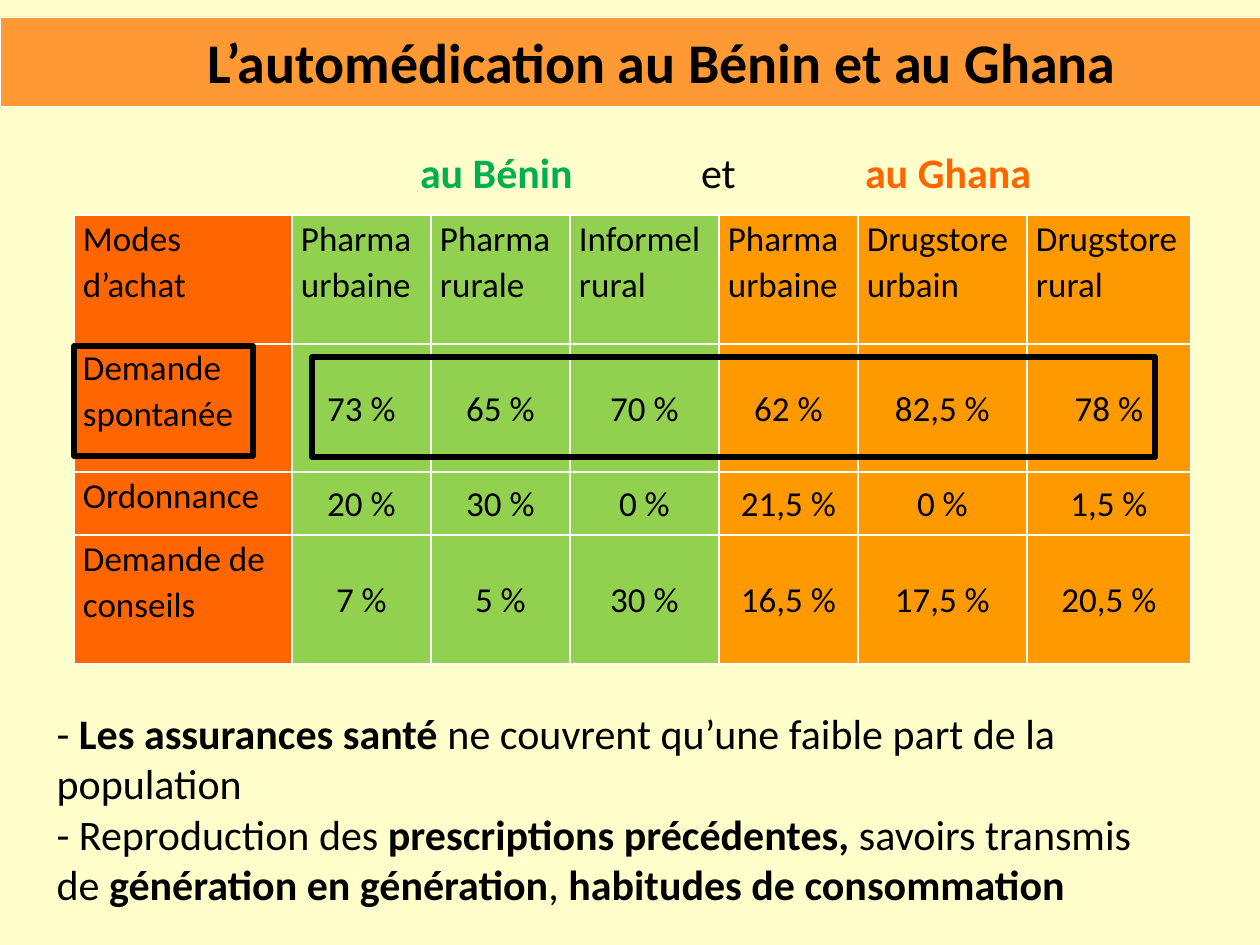
from dataclasses import dataclass

import lxml.etree
import pptx
import pptx.dml.color
import pptx.enum.shapes
import pptx.enum.text
import pptx.oxml.ns
import pptx.util

RGBColor = pptx.dml.color.RGBColor
Align = pptx.enum.text.PP_ALIGN
Anchor = pptx.enum.text.MSO_ANCHOR
qn = pptx.oxml.ns.qn

EMU_PER_PX = 914400 / 126
FONT = "Calibri"

BLACK = RGBColor(0x00, 0x00, 0x00)
WHITE = RGBColor(0xFF, 0xFF, 0xFF)
CREAM = RGBColor(0xFF, 0xFF, 0xCC)
BANNER_ORANGE = RGBColor(0xFF, 0x99, 0x33)
LABEL_ORANGE = RGBColor(0xFF, 0x66, 0x00)
BENIN_FILL = RGBColor(0x92, 0xD0, 0x50)
BENIN_TEXT = RGBColor(0x00, 0xB0, 0x50)
GHANA_FILL = RGBColor(0xFF, 0x99, 0x00)


@dataclass(frozen=True)
class Box:
    left: int
    top: int
    width: int
    height: int


@dataclass(frozen=True)
class Run:
    text: str
    bold: bool = False
    color: RGBColor = BLACK


@dataclass(frozen=True)
class Column:
    width: int
    fill: RGBColor
    texts: tuple[str, ...]
    is_label: bool = False


TABLE_LEFT, TABLE_TOP = 74, 215
ROW_HEIGHTS = (129, 128, 63, 129)
MAIN_COLUMNS = (
    Column(218, LABEL_ORANGE,
           ("Modes d’achat", "Demande spontanée", "Ordonnance", "Demande de conseils"), True),
    Column(139, BENIN_FILL, ("Pharma urbaine", "73 %", "20 %", "7 %")),
    Column(139, BENIN_FILL, ("Pharma rurale", "65 %", "30 %", "5 %")),
    Column(149, BENIN_FILL, ("Informel rural", "70 %", "0 %", "30 %")),
    Column(139, GHANA_FILL, ("Pharma urbaine", "62 %", "21,5 %", "16,5 %")),
    Column(169, GHANA_FILL, ("Drugstore urbain", "82,5 %", "0 %", "17,5 %")),
)
RURAL_DRUGSTORE = (
    Column(164, GHANA_FILL, ("Drugstore rural", "78 %", "1,5 %", "20,5 %")),
)

COUNTRY_TABS = (391, 672, 836)
COUNTRIES = (
    Run("\tau Bénin", True, BENIN_TEXT),
    Run("\tet"),
    Run("\tau Ghana", True, LABEL_ORANGE),
)
NOTES = (
    (
        Run("- "),
        Run("Les assurances santé ", True),
        Run("ne couvrent qu’une faible part de la population"),
    ),
    (
        Run("- Reproduction des "),
        Run("prescriptions précédentes, ", True),
        Run("savoirs transmis de "),
        Run("génération en génération", True),
        Run(", "),
        Run("habitudes de consommation", True),
    ),
)
HIGHLIGHTS = (Box(312, 357, 843, 100), Box(74, 346, 179, 110))


def px(length: int) -> int:
    return pptx.util.Emu(round(length * EMU_PER_PX))


def edges(box: Box) -> tuple[int, int, int, int]:
    return px(box.left), px(box.top), px(box.width), px(box.height)


def place(shape, box: Box) -> None:
    shape.left, shape.top, shape.width, shape.height = edges(box)


def add_runs(paragraph, runs: tuple[Run, ...], size: int) -> None:
    for item in runs:
        run = paragraph.add_run()
        run.text = item.text
        run.font.name = FONT
        run.font.size = pptx.util.Pt(size)
        run.font.bold = item.bold
        run.font.color.rgb = item.color


def add_rectangle(slide, box: Box, line_color: RGBColor, line_width: float):
    shape = slide.shapes.add_shape(
        pptx.enum.shapes.MSO_SHAPE.RECTANGLE, *edges(box))
    shape.shadow.inherit = False
    shape.fill.background()
    shape.line.color.rgb = line_color
    shape.line.width = pptx.util.Pt(line_width)
    return shape


def add_cell_borders(cell) -> None:
    """Draw thin white lines on all sides, placed before the cell fill."""
    properties = cell._tc.get_or_add_tcPr()
    for position, side in enumerate(("a:lnL", "a:lnR", "a:lnT", "a:lnB")):
        line = lxml.etree.Element(qn(side), w=str(pptx.util.Pt(1)))
        fill = lxml.etree.SubElement(line, qn("a:solidFill"))
        lxml.etree.SubElement(fill, qn("a:srgbClr"), val=str(WHITE))
        properties.insert(position, line)


def fill_cell(cell, text: str, fill: RGBColor, centered: bool) -> None:
    cell.fill.solid()
    cell.fill.fore_color.rgb = fill
    cell.margin_left = cell.margin_right = px(9)
    cell.margin_top = cell.margin_bottom = 0
    cell.vertical_anchor = Anchor.MIDDLE if centered else Anchor.TOP
    paragraph = cell.text_frame.paragraphs[0]
    paragraph.alignment = Align.CENTER if centered else Align.LEFT
    paragraph.line_spacing = 1.07
    paragraph.space_after = pptx.util.Pt(4)
    add_runs(paragraph, (Run(text),), 20)
    add_cell_borders(cell)


def add_purchase_table(slide, left: int, columns: tuple[Column, ...]) -> None:
    box = Box(left, TABLE_TOP, sum(column.width for column in columns), sum(ROW_HEIGHTS))
    table = slide.shapes.add_table(len(ROW_HEIGHTS), len(columns), *edges(box)).table
    table.first_row = False
    table.horz_banding = False
    for row, height in zip(table.rows, ROW_HEIGHTS):
        row.height = px(height)
    for column_index, column in enumerate(columns):
        table.columns[column_index].width = px(column.width)
        for row_index, text in enumerate(column.texts):
            centered = row_index > 0 and not column.is_label
            fill_cell(table.cell(row_index, column_index), text, column.fill, centered)


def add_title(slide) -> None:
    banner = add_rectangle(slide, Box(0, 17, 1260, 89), WHITE, 0.25)
    banner.fill.solid()
    banner.fill.fore_color.rgb = BANNER_ORANGE
    title = slide.shapes.title
    title._element.addprevious(banner._element)
    place(title, Box(64, 17, 1196, 88))
    title.text_frame.vertical_anchor = Anchor.MIDDLE
    paragraph = title.text_frame.paragraphs[0]
    paragraph.alignment = Align.CENTER
    add_runs(paragraph, (Run("L’automédication au Bénin et au Ghana", True),), 32)


def add_country_heading(slide) -> None:
    frame = slide.shapes.add_textbox(*edges(Box(29, 135, 1201, 70))).text_frame
    frame.word_wrap = True
    frame.margin_left = 0
    paragraph = frame.paragraphs[0]
    paragraph.line_spacing = 1.1
    tabs = lxml.etree.SubElement(paragraph._p.get_or_add_pPr(), qn("a:tabLst"))
    for position in COUNTRY_TABS:
        lxml.etree.SubElement(tabs, qn("a:tab"), pos=str(px(position)), algn="l")
    add_runs(paragraph, COUNTRIES, 24)


def add_notes(slide) -> None:
    body = slide.placeholders[1]
    place(body, Box(44, 701, 1116, 217))
    frame = body.text_frame
    frame.auto_size = pptx.enum.text.MSO_AUTO_SIZE.NONE
    for index, runs in enumerate(NOTES):
        paragraph = frame.add_paragraph() if index else frame.paragraphs[0]
        properties = paragraph._p.get_or_add_pPr()
        properties.set("marL", "0")
        properties.set("indent", "0")
        lxml.etree.SubElement(properties, qn("a:buNone"))
        paragraph.space_before = pptx.util.Pt(0)
        add_runs(paragraph, runs, 24)


def main() -> None:
    presentation = pptx.Presentation()
    presentation.slide_width, presentation.slide_height = px(1260), px(945)
    slide = presentation.slides.add_slide(presentation.slide_layouts[1])
    slide.background.fill.solid()
    slide.background.fill.fore_color.rgb = CREAM
    add_title(slide)
    add_country_heading(slide)
    add_purchase_table(slide, TABLE_LEFT, MAIN_COLUMNS)
    main_width = sum(column.width for column in MAIN_COLUMNS)
    add_purchase_table(slide, TABLE_LEFT + main_width, RURAL_DRUGSTORE)
    for box in HIGHLIGHTS:
        add_rectangle(slide, box, BLACK, 3)
    add_notes(slide)
    presentation.save("out.pptx")


if __name__ == "__main__":
    main()
